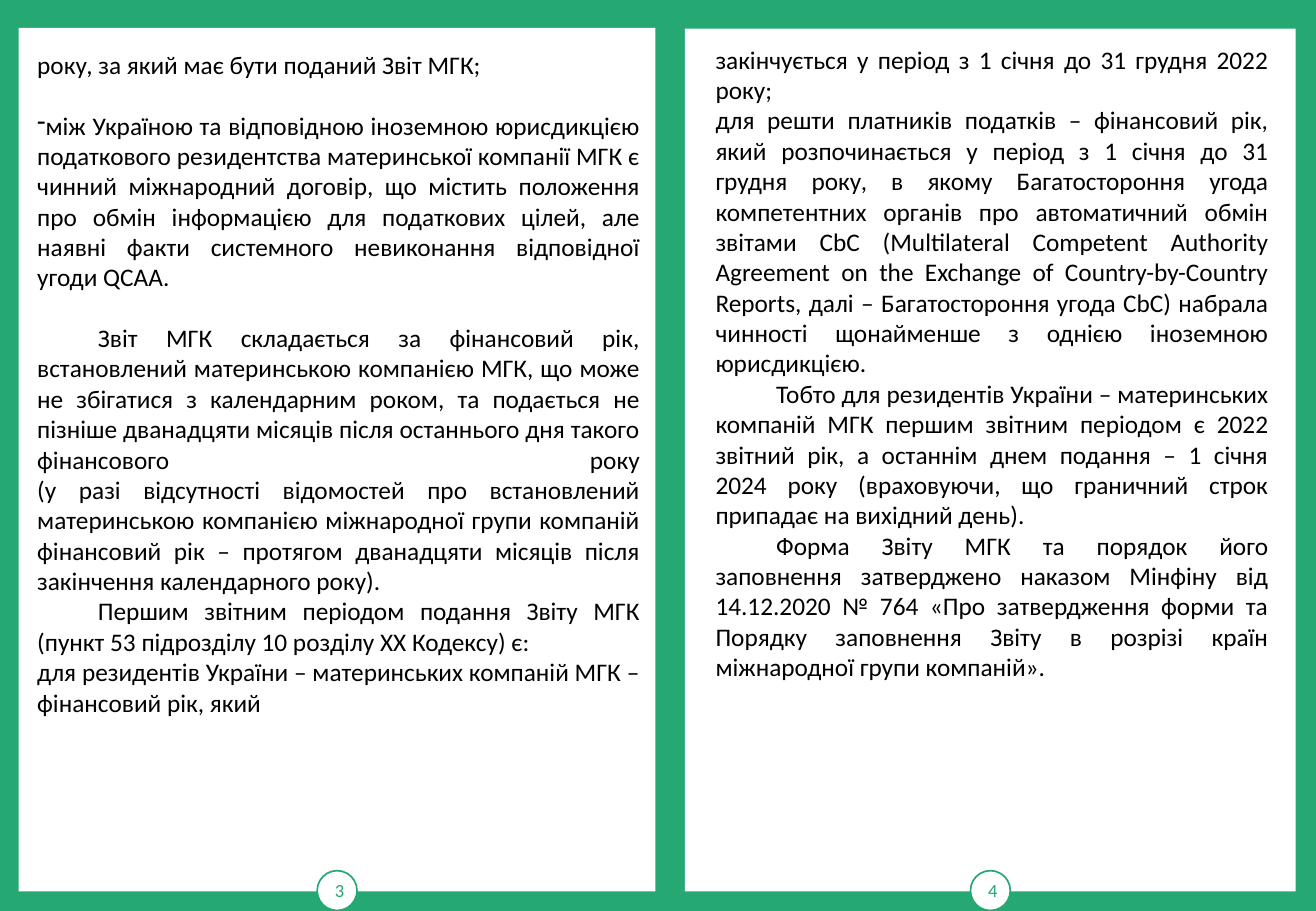
from lxml import etree
from pptx import Presentation
from pptx.dml.color import RGBColor
from pptx.enum import shapes, text
from pptx.oxml import ns
from pptx.util import Pt

GREEN = "25A872"
WHITE = "FFFFFF"
BLACK = "000000"

LEFT_TEXT = [
    ("року, за який має бути поданий Звіт МГК;", {}),
    ("між Україною та відповідною іноземною юрисдикцією податкового резидентства "
     "материнської компанії МГК є чинний міжнародний договір, що містить положення "
     "про обмін інформацією для податкових цілей, але наявні факти системного "
     "невиконання відповідної угоди QCAA.", {"before": 18, "bullet": "-"}),
    ("Звіт МГК складається за фінансовий рік, встановлений материнською компанією МГК, "
     "що може не збігатися з календарним роком, та подається не пізніше дванадцяти "
     "місяців після останнього дня такого фінансового року\v"
     "(у разі відсутності відомостей про встановлений материнською компанією "
     "міжнародної групи компаній фінансовий рік – протягом дванадцяти місяців після "
     "закінчення календарного року).", {"before": 18, "indent": 36}),
    ("Першим звітним періодом подання Звіту МГК (пункт 53 підрозділу 10 розділу ХХ "
     "Кодексу) є:", {"indent": 36}),
    ("для резидентів України – материнських компаній МГК – фінансовий рік, який", {}),
]

RIGHT_TEXT = [
    ("закінчується у період з 1 січня до 31 грудня 2022 року;", {}),
    ("для решти платників податків – фінансовий рік, який розпочинається у період "
     "з 1 січня до 31 грудня року, в якому Багатостороння угода компетентних органів "
     "про автоматичний обмін звітами CbC (Multilateral Competent Authority Agreement "
     "on the Exchange of Country-by-Country Reports, далі – Багатостороння угода CbC) "
     "набрала чинності щонайменше з однією іноземною юрисдикцією.", {}),
    ("Тобто для резидентів України – материнських компаній МГК першим звітним періодом "
     "є 2022 звітний рік, а останнім днем подання – 1 січня 2024 року (враховуючи, що "
     "граничний строк припадає на вихідний день).", {"indent": 36}),
    ("Форма Звіту МГК та порядок його заповнення затверджено наказом Мінфіну від "
     "14.12.2020 № 764 «Про затвердження форми та Порядку заповнення Звіту в розрізі "
     "країн міжнародної групи компаній».", {"indent": 36}),
]


def colour(value):
    return RGBColor.from_string(value)


def write(paragraph, words, size=15, ink=BLACK, align=text.PP_ALIGN.JUSTIFY,
          before=0, indent=0, bullet=None):
    paragraph.text = words
    paragraph.alignment = align
    paragraph.space_before = Pt(before)
    for run in paragraph.runs:
        run.font.name = "Calibri"
        run.font.size = Pt(size)
        run.font.color.rgb = colour(ink)
    for line_break in paragraph._p.findall(ns.qn("a:br")):
        etree.SubElement(line_break, ns.qn("a:rPr")).set("sz", str(size * 100))
    properties = paragraph._p.get_or_add_pPr()
    properties.set("marL", "0")
    properties.set("indent", str(Pt(indent)))
    if bullet:
        etree.SubElement(properties, ns.qn("a:buChar")).set("char", bullet)


def add_panel(group, kind, box, outline=None):
    panel = group.shapes.add_shape(kind, *map(Pt, box))
    panel.shadow.inherit = False
    panel.fill.solid()
    panel.fill.fore_color.rgb = colour(WHITE)
    if outline:
        panel.line.color.rgb = colour(outline)
        panel.line.width = Pt(1)
    else:
        panel.line.fill.background()
    return panel


def add_page(slide, box, number, badge_left):
    left, top, width, height = box
    group = slide.shapes.add_group_shape()
    add_panel(group, shapes.MSO_SHAPE.RECTANGLE, box)
    badge_box = (left + badge_left, top + height - 12.3, 23.6, 23.6)
    badge = add_panel(group, shapes.MSO_SHAPE.OVAL, badge_box, GREEN)
    badge.text_frame.vertical_anchor = text.MSO_ANCHOR.MIDDLE
    write(badge.text_frame.paragraphs[0], number, size=11, ink=GREEN,
          align=text.PP_ALIGN.CENTER)


def add_body(slide, box, paragraphs):
    frame = slide.shapes.add_textbox(*map(Pt, box)).text_frame
    frame.word_wrap = True
    for index, (words, style) in enumerate(paragraphs):
        paragraph = frame.add_paragraph() if index else frame.paragraphs[0]
        write(paragraph, words, **style)


def main():
    deck = Presentation()
    deck.slide_width, deck.slide_height = Pt(780), Pt(540)
    slide = deck.slides.add_slide(deck.slide_layouts[6])
    slide.background.fill.solid()
    slide.background.fill.fore_color.rgb = colour(GREEN)
    add_page(slide, (11, 16.5, 377.5, 511.9), "3", 177)
    add_page(slide, (406, 17, 362, 511.4), "4", 169.2)
    add_body(slide, (15, 25.5, 371.5, 508), LEFT_TEXT)
    add_body(slide, (417, 22.5, 342, 489), RIGHT_TEXT)
    deck.save("out.pptx")


if __name__ == "__main__":
    main()
